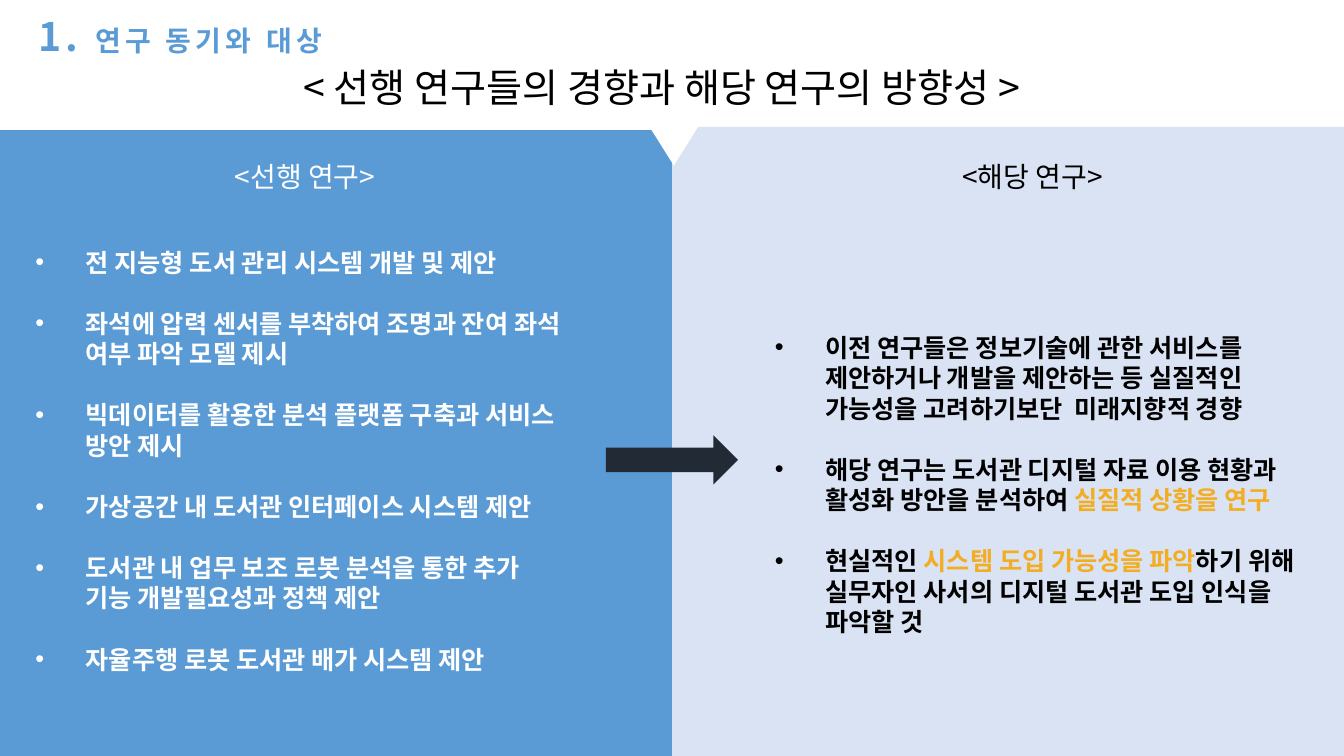
from lxml import etree
from pptx import Presentation
from pptx import util as u
from pptx.dml.color import RGBColor
from pptx.enum import shapes, text
from pptx.oxml.ns import qn

FONT = "Noto Sans CJK KR"
BLUE, PALE, WHITE, BLACK = "5B9BD5", "DAE3F3", "FFFFFF", "000000"
NAVY, GOLD = "222A35", "F2AD22"
LINE_RATIO = 1.21
BULLET_INDENT = u.Cm(1.27)

PRIOR_STUDIES = [
    "전 지능형 도서 관리 시스템 개발 및 제안",
    "좌석에 압력 센서를 부착하여 조명과 잔여 좌석 여부 파악 모델 제시",
    "빅데이터를 활용한 분석 플랫폼 구축과 서비스 방안 제시",
    "가상공간 내 도서관 인터페이스 시스템 제안",
    "도서관 내 업무 보조 로봇 분석을 통한 추가 기능 개발필요성과 정책 제안",
    "자율주행 로봇 도서관 배가 시스템 제안",
]
THIS_STUDY = [
    "이전 연구들은 정보기술에 관한 서비스를 제안하거나 개발을 제안하는 등 실질적인 "
    "가능성을 고려하기보단  미래지향적 경향",
    "해당 연구는 도서관 디지털 자료 이용 현황과 활성화 방안을 분석하여 |실질적 상황을 연구",
    "현실적인 |시스템 도입 가능성을 파악|하기 위해 실무자인 사서의 디지털 도서관 도입 인식을 "
    "파악할 것",
]


def rgb(color):
    """Turn a hex string into a colour."""
    return RGBColor.from_string(color)


def add_block(slide, kind, box, fill):
    """Add a flat preset shape filled with one colour."""
    block = slide.shapes.add_shape(kind, *map(u.Cm, box))
    block.shadow.inherit = False
    block.fill.solid()
    block.fill.fore_color.rgb = rgb(fill)
    block.line.fill.background()
    return block


def style_paragraph(paragraph, size, color, bold=False, align=text.PP_ALIGN.LEFT):
    """Set the font, colour, alignment and line height of a paragraph."""
    font = paragraph.font
    font.size, font.bold, font.name = u.Pt(size), bold, FONT
    font.color.rgb = rgb(color)
    defaults = paragraph._p.pPr.find(qn("a:defRPr"))
    etree.SubElement(defaults, qn("a:ea"), typeface=FONT)
    paragraph.alignment = align
    paragraph.line_spacing = u.Pt(round(size * LINE_RATIO, 1))


def add_label(slide, box):
    """Add a wrapping text box and return its first paragraph."""
    label = slide.shapes.add_textbox(*map(u.Cm, box))
    label.text_frame.word_wrap = True
    return label.text_frame.paragraphs[0]


def add_heading(slide, box, wording, size, color):
    """Write a centred one-line heading."""
    heading = add_label(slide, box)
    heading.text = wording
    style_paragraph(heading, size, color, align=text.PP_ALIGN.CENTER)


def add_section_title(slide, box):
    """Write the numbered section title with spaced letters."""
    title = add_label(slide, box)
    style_paragraph(title, 28, BLUE, bold=True)
    for wording, size in (("1. ", 28), ("연구 동기와 대상", 20)):
        part = title.add_run()
        part.text = wording
        part.font.size = u.Pt(size)
        part._r.get_or_add_rPr().set("spc", "300")


def add_findings(slide, box, findings, fill, color):
    """List findings as bullets, with every second part between bars in gold."""
    frame = add_block(slide, shapes.MSO_SHAPE.RECTANGLE, box, fill).text_frame
    frame.word_wrap = True
    frame.vertical_anchor = text.MSO_ANCHOR.TOP
    frame.margin_top = u.Cm(0.89)
    for index, finding in enumerate(findings):
        item = frame.add_paragraph() if index else frame.paragraphs[0]
        style_paragraph(item, 18, color, bold=True)
        item.space_after = u.Pt(21.8)
        properties = item._p.pPr
        properties.set("marL", str(BULLET_INDENT))
        properties.set("indent", str(-BULLET_INDENT))
        bullet_font = etree.Element(qn("a:buFont"), typeface="Arial")
        bullet = etree.Element(qn("a:buChar"), char="•")
        defaults = properties.find(qn("a:defRPr"))
        defaults.addprevious(bullet_font)
        defaults.addprevious(bullet)
        for position, wording in enumerate(finding.split("|")):
            part = item.add_run()
            part.text = wording
            part.font.color.rgb = rgb(GOLD if position % 2 else color)


def add_panel(slide, box, heading, heading_box, findings, findings_box, fill, color):
    """Draw a panel whose heading and findings are offset from its corner."""
    left, top = box[:2]

    def inside(part):
        """Shift a part by the corner of the panel."""
        return (left + part[0], top + part[1], *part[2:])

    add_block(slide, shapes.MSO_SHAPE.RECTANGLE, box, fill)
    add_heading(slide, inside(heading_box), heading, 20, color)
    add_findings(slide, inside(findings_box), findings, fill, color)


def add_comparison(slide):
    """Set prior studies against this study, with a notch and an arrow between."""
    add_panel(slide, (-0.38, 3.28, 34.65, 16.08), "<선행 연구>", (4.55, 0.61, 7.04, 1.12),
              PRIOR_STUDIES, (1.02, 2.05, 13.94, 12.57), BLUE, WHITE)
    add_panel(slide, (16.94, 3.2, 17.2, 16.13), "<해당 연구>", (4.62, 0.69, 8.92, 1.12),
              THIS_STUDY, (2.34, 4.27, 13.94, 8.71), PALE, BLACK)
    notch = add_block(slide, shapes.MSO_SHAPE.ISOSCELES_TRIANGLE,
                      (15.75, 2.21, 2.46, 1.96), WHITE)
    notch.rotation = 180
    add_block(slide, shapes.MSO_SHAPE.RIGHT_ARROW, (15.27, 10.97, 3.33, 1.24), NAVY)


def main():
    """Build the slide and save it."""
    deck = Presentation()
    deck.slide_width, deck.slide_height = u.Cm(33.87), u.Cm(19.05)
    slide = deck.slides.add_slide(deck.slide_layouts[6])
    add_comparison(slide)
    add_section_title(slide, (0.71, 0.18, 11.48, 1.45))
    add_heading(slide, (4.52, 1.47, 24.31, 1.45),
                "< 선행 연구들의 경향과 해당 연구의 방향성 >", 28, BLACK)
    deck.save("out.pptx")


if __name__ == "__main__":
    main()
